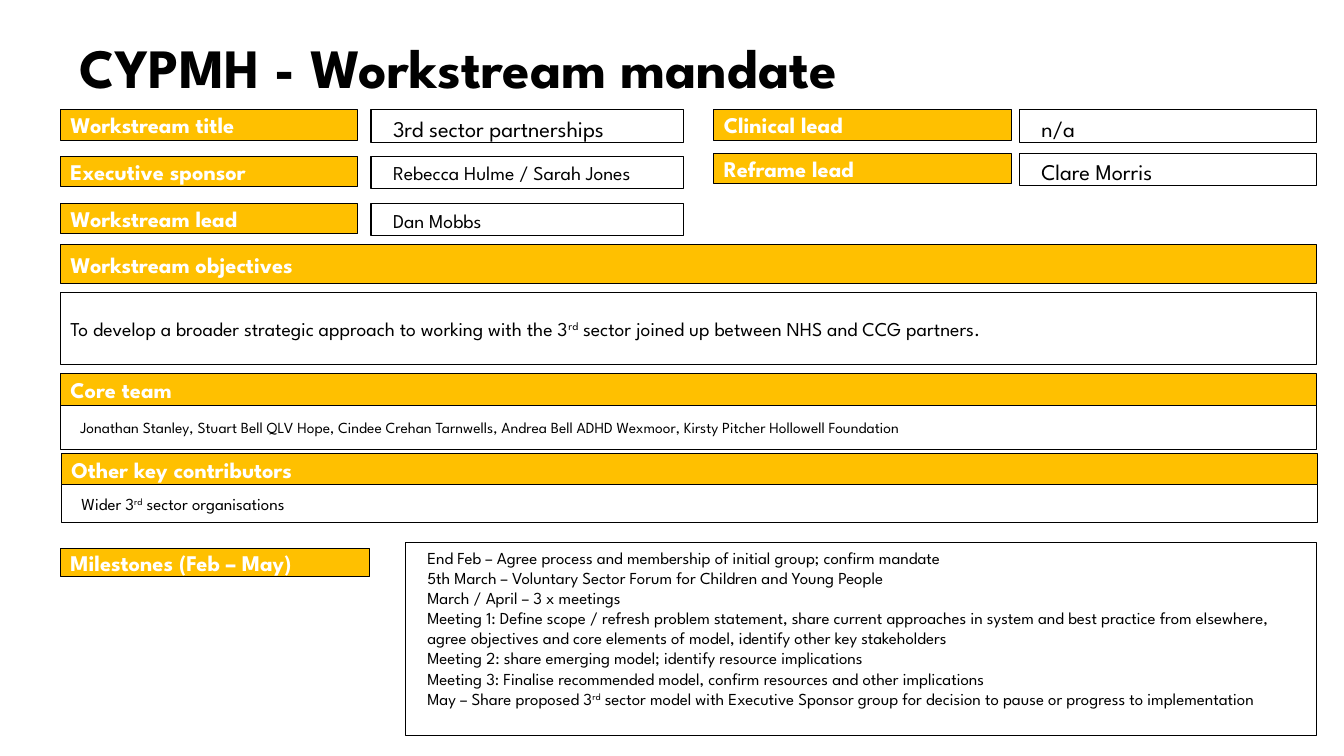
import pptx
import pptx.dml.color
import pptx.enum.shapes
import pptx.enum.text
import pptx.util

Inches = pptx.util.Inches
FONT = "League Spartan"
AMBER, WHITE, BLACK = "FFC000", "FFFFFF", "000000"
MIDDLE = pptx.enum.text.MSO_ANCHOR.MIDDLE
TOP = pptx.enum.text.MSO_ANCHOR.TOP
LEFT, FULL_WIDTH, LABEL_WIDTH = 0.6, 12.46, 2.95

FIELDS = [
    (LEFT, 1.09, "Workstream title", 3.68, 3.1, "3rd sector partnerships", 16),
    (LEFT, 1.55, "Executive sponsor", 3.68, 3.1, "Rebecca Hulme / Sarah Jones", 14),
    (LEFT, 2.02, "Workstream lead", 3.68, 3.1, "Dan Mobbs", 14),
    (7.08, 1.09, "Clinical lead", 10.11, LABEL_WIDTH, "n/a", 16),
    (7.08, 1.52, "Reframe lead", 10.11, LABEL_WIDTH, "Clare Morris", 16),
]
OBJECTIVE = (
    "To develop a broader strategic approach to working with the 3^rd^ sector "
    "joined up between NHS and CCG partners."
)
CORE_TEAM = (
    "Jonathan Stanley, Stuart Bell QLV Hope, Cindee Crehan Tarnwells, "
    "Andrea Bell ADHD Wexmoor, Kirsty Pitcher Hollowell Foundation"
)
MILESTONES = [
    "End Feb – Agree process and membership of initial group; confirm mandate",
    "5th March – Voluntary Sector Forum for Children and Young People",
    "March / April – 3 x meetings",
    "Meeting 1: Define scope / refresh problem statement, share current approaches "
    "in system and best practice from elsewhere, agree objectives and core elements "
    "of model, identify other key stakeholders",
    "Meeting 2: share emerging model; identify resource implications",
    "Meeting 3: Finalise recommended model, confirm resources and other implications",
    "May – Share proposed 3^rd^ sector model with Executive Sponsor group for decision "
    "to pause or progress to implementation",
]


def rgb(hex_color):
    """Turn a hex string into a colour."""
    return pptx.dml.color.RGBColor.from_string(hex_color)


def apply(target, values):
    """Set each named attribute on the target."""
    for name, value in values.items():
        setattr(target, name, value)


def write(paragraph, text, size, color, bold=False):
    """Write text into a paragraph, raising the parts between carets."""
    for position, part in enumerate(text.split("^")):
        run = paragraph.add_run()
        run.text = part
        apply(run.font, {"name": FONT, "size": pptx.util.Pt(size), "bold": bold})
        run.font.color.rgb = rgb(color)
        if position % 2:
            run._r.get_or_add_rPr().set("baseline", "30000")


def add_panel(slide, place, lines, size, fill=None, color=BLACK, bold=False,
              anchor=MIDDLE, indent=0):
    """Add an outlined rectangle holding one paragraph per line."""
    panel = slide.shapes.add_shape(
        pptx.enum.shapes.MSO_SHAPE.RECTANGLE, *map(Inches, place))
    panel.shadow.inherit = False
    if fill:
        panel.fill.solid()
        panel.fill.fore_color.rgb = rgb(fill)
    else:
        panel.fill.background()
    panel.line.color.rgb = rgb(BLACK)
    panel.line.width = pptx.util.Pt(0.75)
    frame = panel.text_frame
    apply(frame, {"word_wrap": True, "vertical_anchor": anchor})
    for number, line in enumerate(lines):
        paragraph = frame.add_paragraph() if number else frame.paragraphs[0]
        paragraph.alignment = pptx.enum.text.PP_ALIGN.LEFT
        if indent:
            paragraph.level = 1
            properties = paragraph._p.get_or_add_pPr()
            properties.set("marL", str(Inches(indent)))
            properties.set("indent", "0")
        write(paragraph, line, size, color, bold)


def add_label(slide, place, text):
    """Add an amber heading bar."""
    add_panel(slide, place, [text], 16, AMBER, WHITE, True)


def add_value(slide, place, lines, size):
    """Add a white box with indented text from its top."""
    add_panel(slide, place, lines, size, WHITE, anchor=TOP, indent=0.12)


def add_title(slide, text):
    """Place and format the slide title."""
    title = slide.shapes.title
    places = zip(("left", "top", "width", "height"), (0.69, 0.33, 11.96, 0.73))
    apply(title, {name: Inches(length) for name, length in places})
    apply(title.text_frame, {"word_wrap": True, "vertical_anchor": MIDDLE})
    heading = title.text_frame.paragraphs[0]
    apply(heading, {"alignment": pptx.enum.text.PP_ALIGN.LEFT, "line_spacing": 0.9})
    write(heading, text, 39.6, BLACK, True)


def main():
    """Build the workstream mandate slide."""
    deck = pptx.Presentation()
    apply(deck, {"slide_width": Inches(13.33), "slide_height": Inches(7.5)})
    slide = deck.slides.add_slide(deck.slide_layouts[5])
    add_title(slide, "CYPMH - Workstream mandate")

    for label_left, top, label, value_left, value_width, value, size in FIELDS:
        add_label(slide, (label_left, top, LABEL_WIDTH, 0.3), label)
        add_value(slide, (value_left, top, value_width, 0.32), [value], size)

    add_label(slide, (LEFT, 2.43, FULL_WIDTH, 0.38), "Workstream objectives")
    add_panel(slide, (LEFT, 2.9, FULL_WIDTH, 0.72), [OBJECTIVE], 14)

    people = [
        (LEFT, 3.71, 0.44, "Core team", CORE_TEAM, 11),
        (0.61, 4.5, 0.37, "Other key contributors", "Wider 3^rd^ sector organisations", 12),
    ]
    for left, top, height, label, names, size in people:
        add_panel(slide, (left, top + 0.31, FULL_WIDTH, height), [names], size, indent=0.1)
        add_label(slide, (left, top, FULL_WIDTH, 0.31), label)

    add_label(slide, (LEFT, 5.44, 3.07, 0.28), "Milestones (Feb – May)")
    add_value(slide, (4.02, 5.38, 9.04, 1.92), MILESTONES, 12)
    deck.save("out.pptx")


if __name__ == "__main__":
    main()
